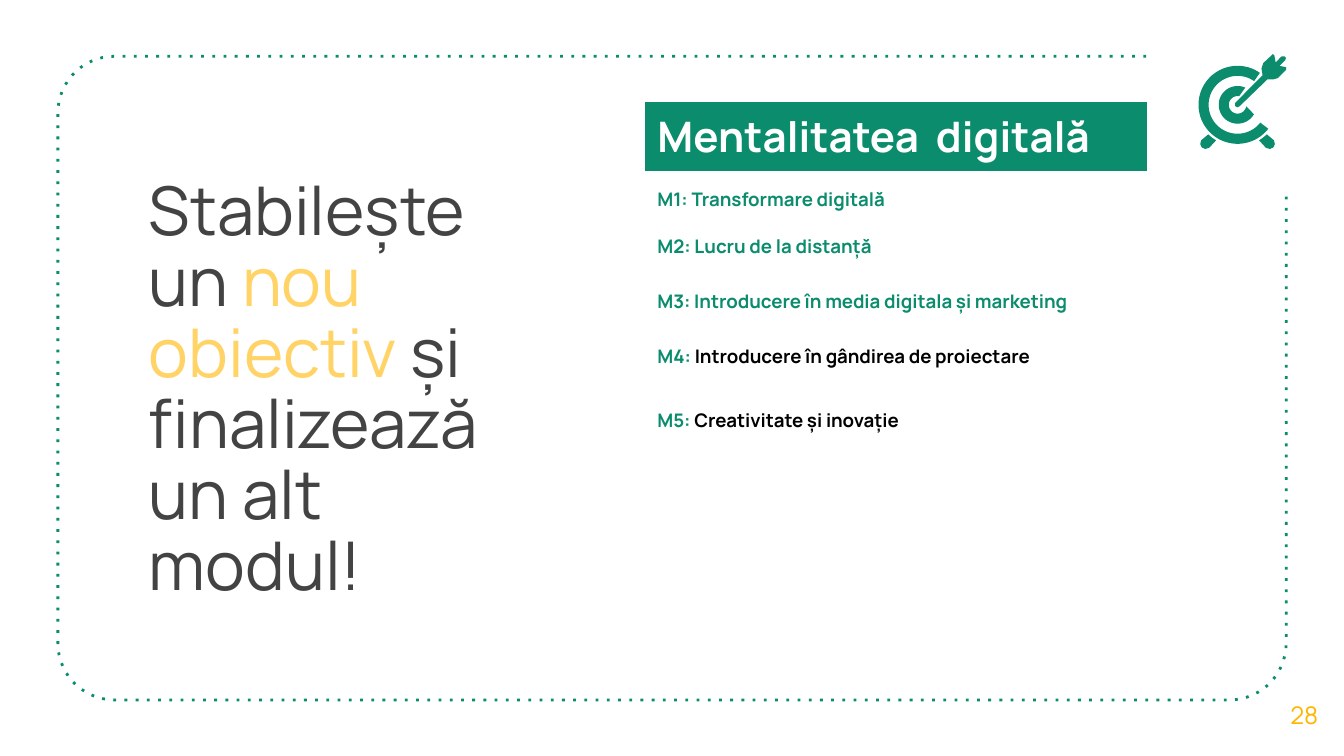
from math import cos, sin, radians
from pptx import Presentation
from pptx.dml.color import RGBColor
from pptx.enum.dml import MSO_LINE as Dash
from pptx.enum.text import MSO_ANCHOR as Anchor, PP_ALIGN as Align
from pptx.oxml.ns import qn
from pptx.util import Pt

GREEN = "0A8C6D"
DARK = "434343"
BLACK = "000000"


def paint(item, tone):
    if hasattr(item, "solid"):
        item.solid()
        item = item.fore_color
    item.rgb = RGBColor.from_string(tone)


def arc(x, y, size, first, last, steps):
    turns = [radians(first + (last - first) * i / steps) for i in range(steps + 1)]
    return [(x + size * cos(t), y + size * sin(t)) for t in turns]


deck = Presentation()
deck.slide_width, deck.slide_height = Pt(720), Pt(405)
slide = deck.slides.add_slide(deck.slide_layouts[6])
shapes = slide.shapes

left, top, right, base, bend = 31, 30.2, 689, 375, 30.3
frame = [(614, top)]
frame += arc(left + bend, top + bend, bend, 270, 180, 15)
frame += arc(left + bend, base - bend, bend, 180, 90, 15)
frame += arc(right - bend, base - bend, bend, 90, 0, 15)
frame += [(right, 105)]
pen = shapes.build_freeform(Pt(frame[0][0]), Pt(frame[0][1]))
pen.add_line_segments([(Pt(x), Pt(y)) for x, y in frame[1:]], close=False)
border = pen.convert_to_shape()
border.shadow.inherit = False
border.fill.background()
paint(border.line.fill, GREEN)
border.line.width = Pt(1.5)
border.line.dash_style = Dash.ROUND_DOT
border.line._ln.find(qn("a:prstDash")).set("val", "dot")

mid, eye = 663, 56.2
outer = arc(mid, eye, 20.9, -55, -322, 60) + arc(mid, eye, 15.5, -322, -55, 60)
inner = arc(mid, eye, 10.1, -66, -330, 40) + arc(mid, eye, 4.7, -350, -80, 30)
foot = [(647.3, 72), (643.5, 75.2), (643, 77.2), (643.8, 79), (645.7, 79.8),
        (647.8, 79.2), (651.5, 75.2), (649.4, 73.8)]
twin = [(2 * mid - x, y) for x, y in foot]
dart = [(681.9, 29), (676.8, 33.8), (675.8, 36.7), (676.4, 40.3), (661.7, 55.2),
        (661.7, 56.8), (662.8, 57.5), (664, 57), (679, 42.5), (682, 42.6),
        (684.5, 41.9), (689, 37.4), (689, 36), (685.4, 35.3), (688.6, 32.2),
        (688.9, 31), (688.2, 30.2), (686.5, 30.3), (683.4, 33.5), (682.7, 29.6)]
icon = shapes.add_group_shape()
for part in (outer, inner, foot, twin, dart):
    pen = icon.shapes.build_freeform(Pt(part[0][0]), Pt(part[0][1]))
    pen.add_line_segments([(Pt(x), Pt(y)) for x, y in part[1:]])
    piece = pen.convert_to_shape()
    piece.shadow.inherit = False
    paint(piece.fill, GREEN)
    piece.line.fill.background()

title = [("Stabilește un ", DARK), ("nou obiectiv ", "FFD366"),
         ("și finalizează un alt modul!", DARK)]
labels = [
    ((72.7, 70.6, 213.8, 278.6), title, 36, Align.LEFT, 0.88),
    ((677.5, 361.4, 42.5, 43.2), [("28", "FFB600")], 13, Align.CENTER, 1.0),
]
for area, runs, size, align, gap in labels:
    box = shapes.add_textbox(*[Pt(v) for v in area])
    text = box.text_frame
    text.word_wrap = True
    text.vertical_anchor = Anchor.MIDDLE
    text.margin_left = text.margin_right = Pt(7.2)
    text.margin_top = text.margin_bottom = Pt(7.2)
    para = text.paragraphs[0]
    para.alignment = align
    para.line_spacing = gap
    for words, tone in runs:
        run = para.add_run()
        run.text = words
        run.font.name = "Manrope"
        run.font.size = Pt(size)
        paint(run.font.color, tone)

rows = [
    (38.2, [("Mentalitatea  digitală", "FFFFFF")]),
    (29.4, [("M1: Transformare digitală", GREEN)]),
    (29.4, [("M2: Lucru de la distanță", GREEN)]),
    (29.4, [("M3: Introducere în media digitala și marketing", GREEN)]),
    (34.4, [("M4: ", GREEN), ("Introducere în gândirea de proiectare", BLACK)]),
    (29.4, [("M5: ", GREEN), ("Creativitate și inovație", BLACK)]),
]
high = sum(row[0] for row in rows)
table = shapes.add_table(len(rows), 1, Pt(345), Pt(54), Pt(270), Pt(high)).table
table.first_row = table.horz_banding = False
for i, (tall, runs) in enumerate(rows):
    table.rows[i].height = Pt(tall)
    cell = table.cell(i, 0)
    cell.vertical_anchor = Anchor.MIDDLE if i == 1 else Anchor.TOP
    cell.margin_left = cell.margin_right = Pt(7.2)
    cell.margin_top = cell.margin_bottom = Pt(3.6)
    if i == 0:
        paint(cell.fill, GREEN)
    else:
        cell.fill.background()
    for words, tone in runs:
        run = cell.text_frame.paragraphs[0].add_run()
        run.text = words
        run.font.name = "Manrope"
        run.font.size = Pt(10 if i else 22.5)
        run.font.bold = True
        paint(run.font.color, tone)

deck.save("out.pptx")
